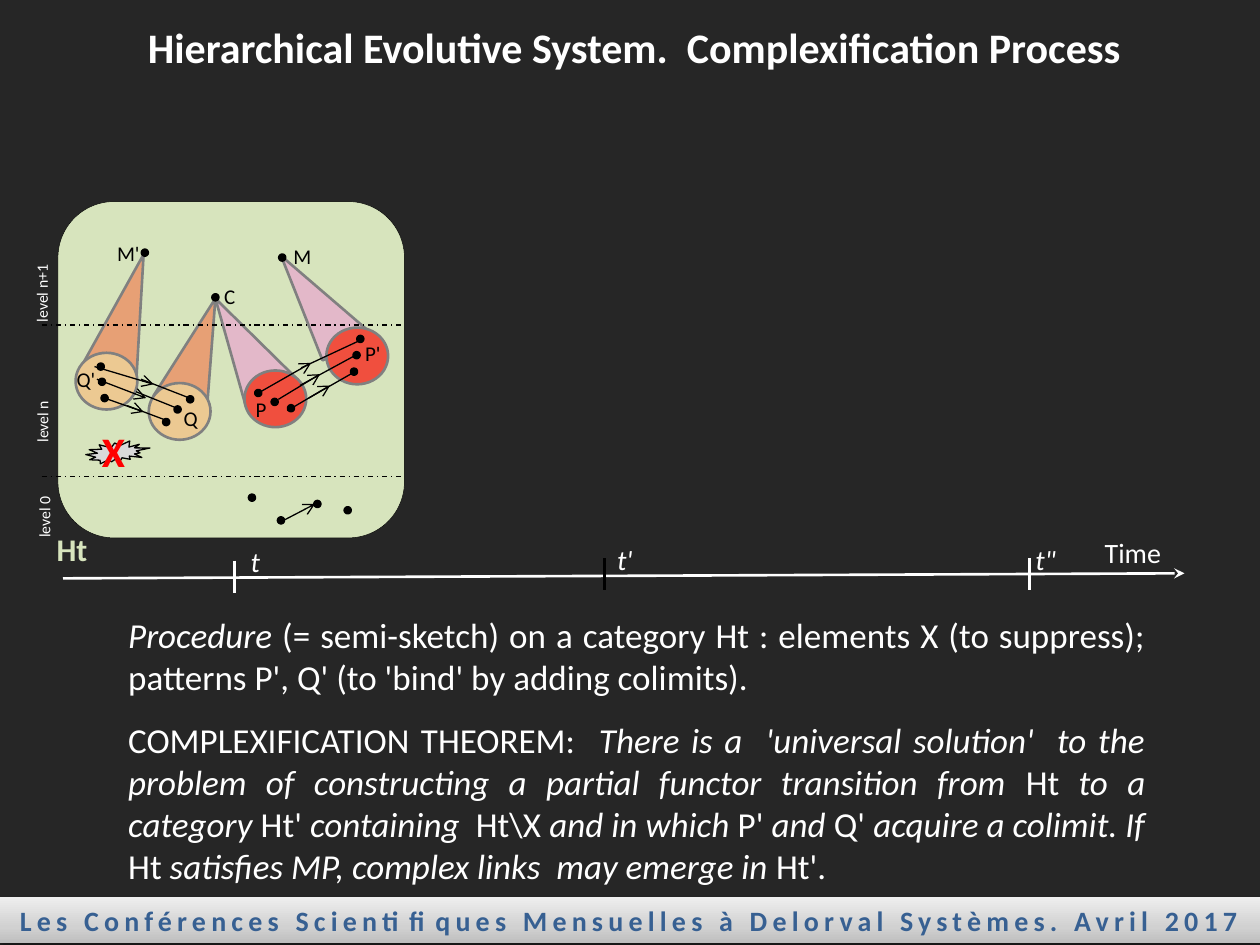
from copy import deepcopy
from lxml import etree
from pptx import Presentation
from pptx.dml.color import RGBColor
from pptx.enum.dml import MSO_LINE as Dash
from pptx.enum.shapes import MSO_CONNECTOR as Link, MSO_SHAPE as Form
from pptx.enum.text import MSO_AUTO_SIZE as Fit, PP_ALIGN as Align
from pptx.oxml import parse_xml
from pptx.oxml.ns import nsdecls, qn
from pptx.util import Pt

THEME = dict(
    font="Calibri", back="262626", white="FFFFFF", black="000000", panel="D7E4BD",
    pink="E3B8C9", orange="E7A075", red="F04F3E", sand="ECC992", edge="808080",
    seal="D9D9D9", cross="FF0000", foot="376092",
    bar=((0, "BDBDBD"), (0.35, "D1D1D1"), (1, "EEEEEE")),
    head=24, body=20, name=18, time=16, label=12, level=9)

# Content: asterisks switch italics on and off
TITLE = "Hierarchical Evolutive System.  Complexification Process"
FOOT = "Les Conférences Scientifiques Mensuelles à Delorval Systèmes. Avril 2017"
BODY = [
    "*Procedure* (= semi-sketch) on a category Ht : elements X (to suppress); "
    "patterns P', Q' (to 'bind' by adding colimits).",
    "COMPLEXIFICATION THEOREM:  *There is a  'universal solution'  to the problem of "
    "constructing a partial functor transition from *Ht* to a category *Ht'* containing  "
    "*Ht\\X* and in which *P' *and *Q'* acquire a colimit. If *Ht* satisfies MP, complex "
    "links  may emerge in *Ht'."]

# Cones: colour and three corners
CONES = [
    ("pink", [(216.7, 194.4), (160.6, 146.2), (184.3, 205.9)]),
    ("orange", [(46.1, 210.2), (82.1, 145.4), (77.8, 219.6)]),
    ("pink", [(170.6, 217.4), (123.1, 170.6), (140.4, 231.8)]),
    ("orange", [(87.8, 226.1), (123.1, 170.6), (118.1, 236.2)])]
DISCS = [("red", 139.7, 211.7), ("sand", 85, 218.9),
         ("red", 186.5, 187.2), ("sand", 43.2, 201.6)]
# Dot centres, by group
DOTS = {
    "tops": [(161.3, 147.2), (82.8, 144.4), (123.1, 169.9)],
    "P": [(147.6, 224.6), (157, 229.7), (166.3, 233.3)],
    "P'": [(205.9, 193.7), (203.8, 203), (202.3, 212.4)],
    "Q": [(108.7, 228.2), (101.5, 234), (95, 241.2)],
    "Q'": [(57.6, 209.5), (58.3, 218.2), (59.8, 227.5)],
    "level 0": [(144, 284.4), (160.6, 297.4), (198.7, 291.6), (181.4, 288)]}
# Links: an arrow, then the plain part that carries it on
ARROWS = [
    (147.6, 224.6, 177.8, 207.4), (159.1, 228.2, 182.9, 213.8),
    (164.2, 234.7, 188.6, 220.3), (54, 209.5, 87.8, 219.6),
    (55.4, 216.7, 83.5, 227.5), (59.8, 227.5, 82.1, 235.4), (162, 297.4, 180, 288)]
TAILS = [
    (172.1, 210.2, 204.5, 195.1), (171.4, 220.3, 204.5, 202.3),
    (176.4, 227.5, 201.6, 213.1), (80.6, 216.7, 110.2, 228.2),
    (77.8, 223.9, 103, 234), (72.7, 231.8, 95.8, 240.5)]
LABELS = [("M", 160.6, 135.4, 25.2), ("M'", 59.8, 133.9, 27.4), ("C", 121, 158.4, 20.9),
          ("Q'", 36.7, 205.9, 28.1), ("Q", 97.9, 228.2, 26.6),
          ("P", 139, 223.2, 29.5), ("P'", 201.6, 190.8, 33.8)]
LEVELS = [("level n+1", 0, 155.5, 50.4, 20.9), ("level n", 5.8, 229.7, 39.6, 20.9),
          ("level 0", 5.8, 285.8, 38.9, 18)]
BOUNDS = [185.8, 272.2]
TICKS = [(133.9, 320.4, "white"), (345.6, 319, "black"), (588.2, 319, "white")]
TIMES = [("*t*", 136.1, 307.4, 23), ("*t'*", 345.6, 306.7, 23.8),
         ("*t\"*", 584.6, 306.7, 36.7), ("Time", 624.2, 302.4, 58.3)]

deck = Presentation()
deck.slide_width, deck.slide_height = Pt(720), Pt(540)
slide = deck.slides.add_slide(deck.slide_layouts[6])
shapes = slide.shapes


def tint(key):
    return RGBColor.from_string(THEME.get(key, key))


def paint(shape, fill, edge="black", width=2):
    shape.shadow.inherit = False
    shape.fill.solid()
    shape.fill.fore_color.rgb = tint(fill)
    shape.line.color.rgb = tint(edge)
    shape.line.width = Pt(width)


def form(kind, x, y, w, h):
    return shapes.add_shape(kind, Pt(x), Pt(y), Pt(w), Pt(h))


def line(x1, y1, x2, y2, color="black", width=0.75, tip=None, dash=None):
    link = shapes.add_connector(Link.STRAIGHT, Pt(x1), Pt(y1), Pt(x2), Pt(y2))
    link.line.color.rgb = tint(color)
    link.line.width = Pt(width)
    if dash:
        link.line.dash_style = dash
    if tip:
        etree.SubElement(link.line._get_or_add_ln(), qn("a:tailEnd"), type=tip)
    etree.SubElement(link._element.spPr, qn("a:effectLst"))


def text(paras, x, y, w, h, size="label", color="white", bold=False, wrap=True,
         align=Align.LEFT, turn=0, before=(0,), track=0):
    box = shapes.add_textbox(Pt(x), Pt(y), Pt(w), Pt(h))
    box.rotation = turn
    frame = box.text_frame
    frame.word_wrap, frame.auto_size = wrap, Fit.SHAPE_TO_FIT_TEXT
    paras = [paras] if isinstance(paras, str) else paras
    for i, (words, gap) in enumerate(zip(paras, before)):
        para = frame.add_paragraph() if i else frame.paragraphs[0]
        para.alignment, para.space_before = align, Pt(gap)
        for j, part in enumerate(words.split("*")):
            if not part:
                continue
            run = para.add_run()
            run.text = part
            font = run.font
            font.name, font.size = THEME["font"], Pt(THEME[size])
            font.bold, font.italic = bold, j % 2 == 1
            font.color.rgb = tint(color)
            if track:
                run._r.get_or_add_rPr().set("spc", str(track * 100))


# Background and footer bar
slide.background.fill.solid()
slide.background.fill.fore_color.rgb = tint("back")
bar = form(Form.RECTANGLE, 0, 512.6, 720, 26.6)
bar.line.fill.background()
bar.fill.gradient()
bar.fill.gradient_angle = 90
first = bar.fill.gradient_stops[0]._gs
first.addnext(deepcopy(first))
for stop, (place, color) in zip(bar.fill.gradient_stops, THEME["bar"]):
    stop.position, stop.color.rgb = place, tint(color)
bar._element.spPr.append(parse_xml(
    f'<a:effectLst {nsdecls("a")}><a:outerShdw blurRad="{Pt(3.1)}" dist="{Pt(1.6)}" '
    'dir="5400000" rotWithShape="0"><a:srgbClr val="000000"><a:alpha val="38000"/>'
    '</a:srgbClr></a:outerShdw></a:effectLst>'))
text(FOOT, 0, 512.6, 720, 26.6, size="time", color="foot", bold=True,
     align=Align.CENTER, track=3)

# Category panel with its cones, discs and dots
paint(form(Form.FLOWCHART_ALTERNATE_PROCESS, 33.1, 115.2, 198, 192.2), "panel", width=0.25)
for fill, spots in CONES:
    start, *rest = [(Pt(x), Pt(y)) for x, y in spots]
    path = shapes.build_freeform(*start)
    path.add_line_segments(rest, close=True)
    paint(path.convert_to_shape(), fill, "edge", 1.5)
for fill, x, y in DISCS:
    paint(form(Form.OVAL, x, y, 35.3, 32.4), fill, "edge", 1.5)
DOT = 2.9
for group in DOTS.values():
    for x, y in group:
        paint(form(Form.OVAL, x - DOT / 2, y - DOT / 2, DOT, DOT), "black")

# Links and level bounds
for ends in ARROWS:
    line(*ends, tip="arrow")
for ends in TAILS:
    line(*ends)
for y in BOUNDS:
    line(23.8, y, 229.7, y, dash=Dash.DASH_DOT)

# Element to suppress
paint(form(Form.EXPLOSION2, 49, 252, 36.7, 13), "seal", width=0.75)
text("X", 51.1, 239.8, 28.1, 36, size="head", color="cross", bold=True, wrap=False)

# Panel labels
for words, x, y, w in LABELS:
    text(words, x, y, w, 21.6, color="black", wrap=False)
for words, *place in LEVELS:
    text(words, *place, size="level", wrap=False, turn=270)
text("Ht", 25.2, 299.5, 32.4, 28.8, size="name", color="panel", bold=True, wrap=False)

# Time axis
line(36, 330.5, 676.8, 327.6, "white", 1.5, tip="stealth")
for x, y, color in TICKS:
    line(x, y, x, y + 18.4, color, 1.5)
for words, x, y, w in TIMES:
    text(words, x, y, w, 26.6, size="time")

# Title and theorem
text(TITLE, 0, 8.6, 725, 36, size="head", bold=True, align=Align.CENTER)
text(BODY, 66.2, 347, 595.4, 164.9, size="body", align=Align.JUSTIFY, before=(6, 12))

deck.save("out.pptx")
